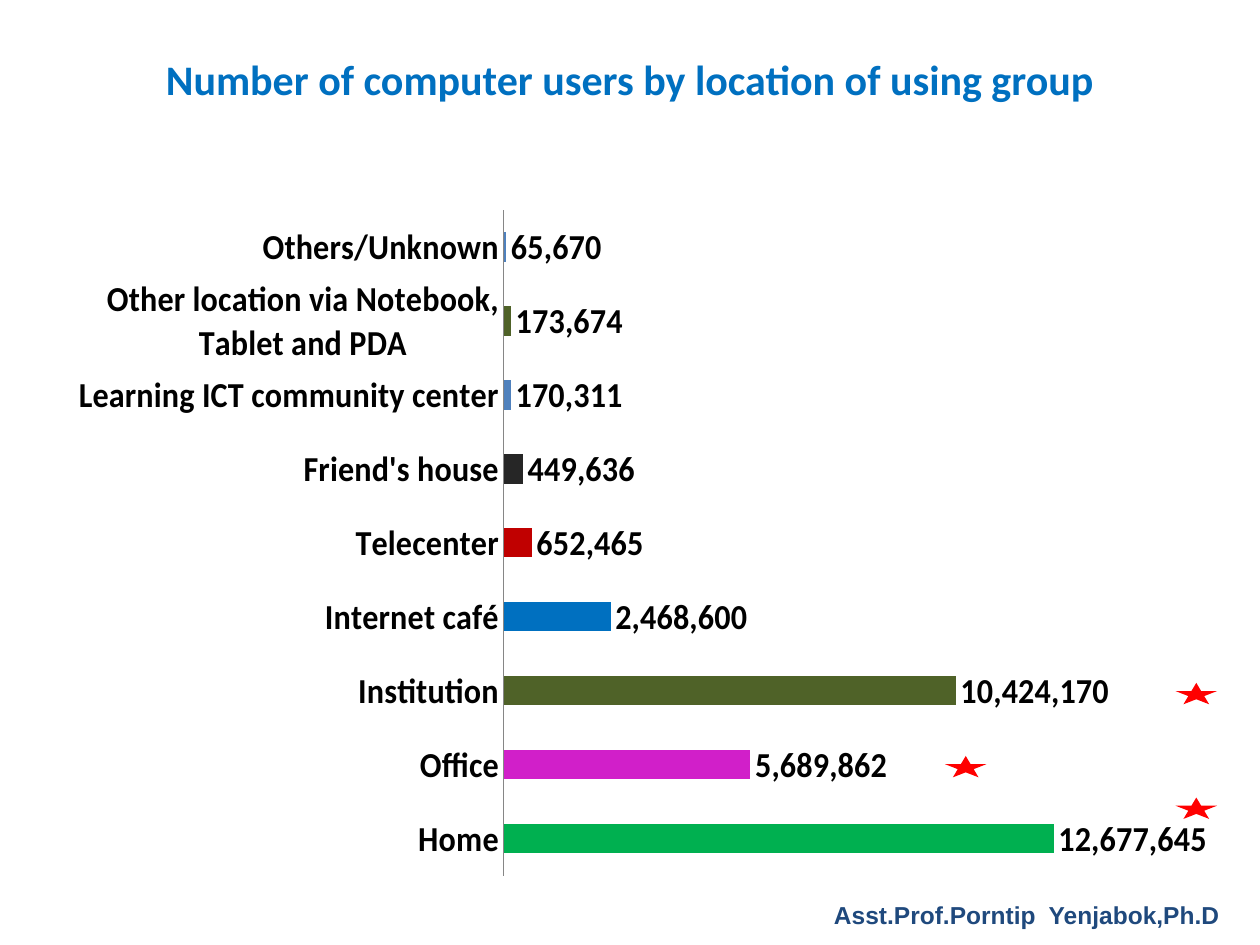
import pptx
import pptx.chart.data
import pptx.dml.color
import pptx.enum.chart
import pptx.enum.shapes
import pptx.enum.text
import pptx.util
from lxml import etree

Inches = pptx.util.Inches
Pt = pptx.util.Pt
ALIGN = pptx.enum.text.PP_ALIGN
ANCHOR = pptx.enum.text.MSO_ANCHOR

# Content
TITLE = "Number of computer users by location of using group"
AUTHOR = "Asst.Prof.Porntip  Yenjabok,Ph.D"
SERIES_COLOR = "4F81BD"
# Location, users, bar colour
USERS = [
    ("Home", 12677645, "00B050"),
    ("Office", 5689862, "D11FC9"),
    ("Institution", 10424170, "4F6228"),
    ("Internet café", 2468600, "0070C0"),
    ("Telecenter", 652465, "C00000"),
    ("Friend's house", 449636, "262626"),
    ("Learning ICT community center", 170311, SERIES_COLOR),
    ("Other location via Notebook, Tablet and PDA", 173674, "4F6228"),
    ("Others/Unknown", 65670, SERIES_COLOR),
]
STARS = [(9.33, 6.33), (9.33, 5.42), (7.5, 6)]
PLOT = {"x": 0.432, "y": 0.163, "w": 0.568, "h": 0.792}


def rgb(color):
    return pptx.dml.color.RGBColor.from_string(color)


def set_font(font, size, color, name="Calibri"):
    font.name, font.size, font.bold = name, Pt(size), True
    font.color.rgb = rgb(color)


def add_text(page, text, place, size, color, name="Calibri",
             align=ALIGN.CENTER, anchor=ANCHOR.TOP, wrap=True):
    box = page.shapes.add_textbox(*map(Inches, place))
    frame = box.text_frame
    frame.word_wrap = wrap
    frame.vertical_anchor = anchor
    para = frame.paragraphs[0]
    para.alignment = align
    span = para.add_run()
    span.text = text
    set_font(span.font, size, color, name)


def set_inner_plot(chart, plot):
    """Fix the inner plot area as fractions of the chart."""
    area = chart._chartSpace.chart.plotArea
    space = etree.QName(area).namespace
    for old in area.findall(f"{{{space}}}layout"):
        area.remove(old)
    layout = etree.Element(f"{{{space}}}layout")
    manual = etree.SubElement(layout, f"{{{space}}}manualLayout")
    settings = {"layoutTarget": "inner", "xMode": "edge", "yMode": "edge", **plot}
    for tag, value in settings.items():
        etree.SubElement(manual, f"{{{space}}}{tag}", val=str(value))
    area.insert(0, layout)


def add_user_chart(page):
    data = pptx.chart.data.CategoryChartData(number_format="#,##0")
    data.categories = [name for name, _, _ in USERS]
    data.add_series("Series 1", [count for _, count, _ in USERS])
    chart = page.shapes.add_chart(
        pptx.enum.chart.XL_CHART_TYPE.BAR_CLUSTERED,
        *map(Inches, (0.33, 0.58, 9.25, 6.67)), data).chart
    chart.has_legend = False
    chart.has_title = False
    set_font(chart.font, 20, "000000")
    set_inner_plot(chart, PLOT)

    # Axes
    chart.value_axis.visible = False
    chart.value_axis.has_major_gridlines = False
    axis = chart.category_axis
    axis.major_tick_mark = pptx.enum.chart.XL_TICK_MARK.NONE
    axis.format.line.color.rgb = rgb("868686")
    axis.format.line.width = Pt(0.75)

    # Bars and value labels
    plot = chart.plots[0]
    plot.gap_width, plot.overlap = 150, -25
    plot.vary_by_categories = False
    series = plot.series[0]
    series.format.fill.solid()
    series.format.fill.fore_color.rgb = rgb(SERIES_COLOR)
    for index, (_, _, color) in enumerate(USERS):
        if color != SERIES_COLOR:
            fill = series.points[index].format.fill
            fill.solid()
            fill.fore_color.rgb = rgb(color)
    labels = series.data_labels
    labels.show_value = True
    labels.number_format, labels.number_format_is_linked = "#,##0", False
    labels.position = pptx.enum.chart.XL_LABEL_POSITION.OUTSIDE_END
    set_font(labels.font, 20, "000000")


def add_star(page, left, top):
    star = page.shapes.add_shape(
        pptx.enum.shapes.MSO_SHAPE.STAR_5_POINT,
        *map(Inches, (left, top, 0.33, 0.17)))
    star.shadow.inherit = False
    star.fill.solid()
    star.fill.fore_color.rgb = rgb("FF0000")
    star.line.fill.background()


def main():
    deck = pptx.Presentation()
    deck.slide_width, deck.slide_height = Inches(10), Inches(7.5)
    page = deck.slides.add_slide(deck.slide_layouts[6])
    add_text(page, TITLE, (0, 0, 10, 1.25), 24, "0070C0", anchor=ANCHOR.MIDDLE)
    add_user_chart(page)
    add_text(page, AUTHOR, (6.5, 7.09, 3.28, 0.57), 14, "1F497D", name="Arial",
             align=ALIGN.RIGHT, wrap=False)
    for left, top in STARS:
        add_star(page, left, top)
    deck.save("out.pptx")


if __name__ == "__main__":
    main()
